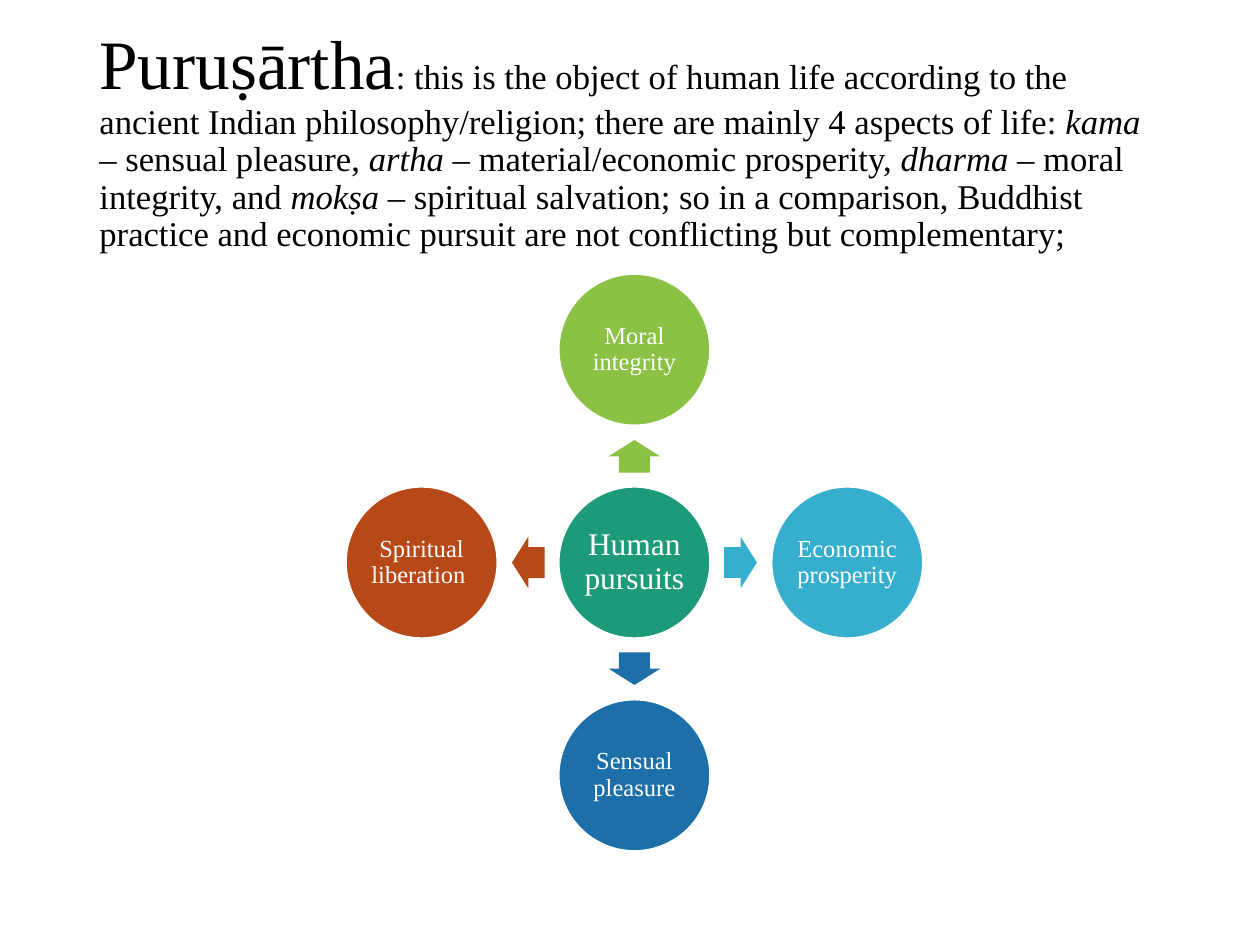
from pptx import Presentation
from pptx.dml.color import RGBColor
from pptx.enum import shapes, text
from pptx.util import Cm, Pt

FONT = "Times New Roman"
BLACK = RGBColor(0x00, 0x00, 0x00)
WHITE = RGBColor(0xFF, 0xFF, 0xFF)
TEAL = RGBColor(0x1D, 0x9A, 0x78)
GREEN = RGBColor(0x8B, 0xC1, 0x45)
CYAN = RGBColor(0x36, 0xAF, 0xCE)
BLUE = RGBColor(0x1D, 0x6F, 0xA9)
RUST = RGBColor(0xB7, 0x49, 0x19)

# Wording, size in points, italic
TITLE = [
    ("Puruṣārtha", 39.6, False),
    (": this is the object of human life according to the ancient Indian "
     "philosophy/religion; there are mainly 4 aspects of life: ", 19.8, False),
    ("kama", 19.8, True),
    (" – sensual pleasure, ", 19.8, False),
    ("artha", 19.8, True),
    (" – material/economic prosperity, ", 19.8, False),
    ("dharma", 19.8, True),
    (" – moral integrity, and ", 19.8, False),
    ("mokṣa", 19.8, True),
    (" – spiritual salvation; so in a comparison, Buddhist practice and "
     "economic pursuit are not conflicting but complementary;", 19.8, False),
]
HUB = ("Human pursuits", TEAL)
# Wording, colour, direction from the hub (x, y), arrow rotation
PURSUITS = [
    ("Moral integrity", GREEN, (0, -1), 270),
    ("Economic prosperity", CYAN, (1, 0), 0),
    ("Sensual pleasure", BLUE, (0, 1), 90),
    ("Spiritual liberation ", RUST, (-1, 0), 180),
]

CENTRE_X, CENTRE_Y = 12.79, 11.34
CIRCLE = 3.07
CIRCLE_DISTANCE, ARROW_DISTANCE = 4.29, 2.14
ARROW_LENGTH, ARROW_WIDTH = 0.66, 1.04


def apply(target, values):
    for name, value in values.items():
        setattr(target, name, value)


def add_span(para, wording, size, color, italic=False):
    span = para.add_run()
    span.text = wording
    apply(span.font, {"name": FONT, "size": Pt(size), "italic": italic})
    span.font.color.rgb = color


def add_centred(page, kind, x, y, width, height, color):
    """Add a plain filled shape whose middle is at x, y (in cm)."""
    shape = page.shapes.add_shape(kind, Cm(x - width / 2), Cm(y - height / 2),
                                  Cm(width), Cm(height))
    shape.shadow.inherit = False
    shape.fill.solid()
    shape.fill.fore_color.rgb = color
    shape.line.fill.background()
    return shape


def add_circle(page, wording, color, x, y, size, inset):
    circle = add_centred(page, shapes.MSO_SHAPE.OVAL, x, y, CIRCLE, CIRCLE, color)
    circle.line.color.rgb = WHITE
    circle.line.width = Pt(1.5)
    sides = ("left", "top", "right", "bottom")
    apply(circle.text_frame, {f"margin_{side}": Cm(inset) for side in sides})
    apply(circle.text_frame, {"word_wrap": True,
                              "vertical_anchor": text.MSO_ANCHOR.MIDDLE})
    para = circle.text_frame.paragraphs[0]
    apply(para, {"alignment": text.PP_ALIGN.CENTER, "line_spacing": 0.9})
    add_span(para, wording, size, WHITE)


def add_arrow(page, color, x, y, rotation):
    arrow = add_centred(page, shapes.MSO_SHAPE.RIGHT_ARROW, x, y,
                        ARROW_LENGTH, ARROW_WIDTH, color)
    arrow.adjustments[0] = 0.6
    arrow.adjustments[1] = 0.5
    arrow.rotation = rotation


def add_title(page):
    title = page.shapes.title
    apply(title, {"left": Cm(1.75), "top": Cm(1.02),
                  "width": Cm(21.9), "height": Cm(3.68)})
    apply(title.text_frame, {"word_wrap": True,
                             "auto_size": text.MSO_AUTO_SIZE.NONE,
                             "vertical_anchor": text.MSO_ANCHOR.MIDDLE})
    para = title.text_frame.paragraphs[0]
    apply(para, {"alignment": text.PP_ALIGN.LEFT, "line_spacing": 0.9})
    for wording, size, italic in TITLE:
        add_span(para, wording, size, BLACK, italic)


def main():
    deck = Presentation()
    apply(deck, {"slide_width": Cm(25.4), "slide_height": Cm(19.05)})
    page = deck.slides.add_slide(deck.slide_layouts[5])
    add_title(page)
    add_circle(page, *HUB, CENTRE_X, CENTRE_Y, 18, 0.08)
    for wording, color, (dx, dy), rotation in PURSUITS:
        add_arrow(page, color, CENTRE_X + dx * ARROW_DISTANCE,
                  CENTRE_Y + dy * ARROW_DISTANCE, rotation)
        add_circle(page, wording, color, CENTRE_X + dx * CIRCLE_DISTANCE,
                   CENTRE_Y + dy * CIRCLE_DISTANCE, 14, 0.05)
    deck.save("out.pptx")


if __name__ == "__main__":
    main()
